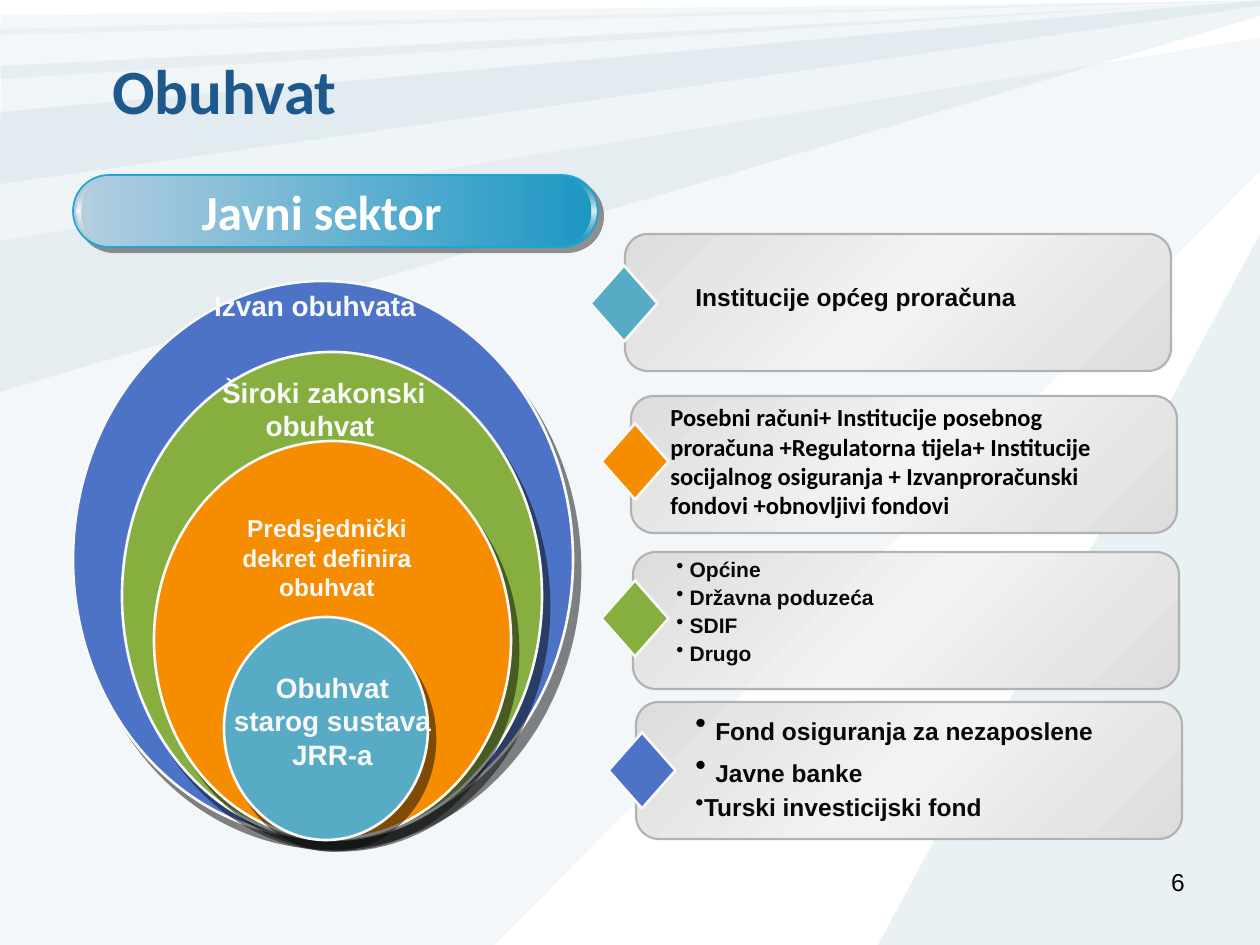
import pptx
import pptx.util
import pptx.dml.color
import pptx.enum.shapes
import pptx.enum.text
import pptx.oxml.ns
import lxml.etree

PX = 914400 / 126
SHAPE = pptx.enum.shapes.MSO_SHAPE
ALIGN = pptx.enum.text.PP_ALIGN
qn = pptx.oxml.ns.qn

RAYS = [
    (10, [(1260, 38), (0, 241), (0, 945), (495, 945), (1260, 171)]),
    (20, [(1260, 234), (878, 945), (1260, 945)]),
    (10, [(1, 15), (0, 35), (1260, 1)]),
    (10, [(1259, 0), (0, 79), (0, 29)]),
    (15, [(1260, 16), (0, 392), (0, 112), (1260, 0)]),
    (14, [(1260, 1), (1, 66), (0, 184), (1260, 6)]),
]
PANEL_SIZE = (546, 137)
DIAMOND_SIZE = (76, 67)
LEVELS = [
    ("57ABC5", (625, 234), (586, 270)),
    ("F68D00", (631, 396), (597, 428)),
    ("87AF3F", (633, 552), (597, 585)),
    ("4D73C7", (636, 702), (604, 737)),
]
ELLIPSES = [
    ("4D73C7", (73, 281, 500, 557)),
    ("87AF3F", (122, 352, 420, 488)),
    ("F68D00", (154, 441, 357, 398)),
    ("57ABC5", (224, 617, 204, 223)),
]
PANEL_STOPS = [(0, "DDDDDD", 100), (50, "F3F3F3", 100), (100, "DDDDDD", 100)]
HEADER_STOPS = [(0, "B6CFE1", 100), (100, "1B97C3", 100)]
GLOSS_STOPS = [(0, "B6B6B6", 0), (50, "FFFFFF", 84), (100, "B6B6B6", 0)]
GLOSSES = [((572, 181, 24, 60), True), ((77, 181, 24, 60), False)]

TEXTS = [
    ((100, 45, 1007, 158), ["Obuhvat"], 36, "Calibri", "1E598E", True, ALIGN.LEFT),
    ((903, 861, 294, 66), ["6"], 14, "Arial", "000000", False, ALIGN.RIGHT),
    ((683, 276, 483, 48), ["Institucije općeg proračuna"], 14, "Arial", "080808", True, ALIGN.LEFT),
    ((658, 396, 496, 146),
     ["Posebni računi+ Institucije posebnog proračuna +Regulatorna tijela+ Institucije "
      "socijalnog osiguranja + Izvanproračunski fondovi +obnovljivi fondovi"],
     14, "Calibri", "000000", True, ALIGN.LEFT),
    ((209, 664, 247, 127), ["Obuhvat", "starog sustava JRR-a"], 16, "Arial", "F8F8F8", True, ALIGN.CENTER),
    ((197, 507, 260, 113), ["Predsjednički dekret definira obuhvat"], 14, "Arial", "F8F8F8", True, ALIGN.CENTER),
    ((190, 369, 260, 89), [" Široki zakonski obuhvat"], 16, "Arial", "F8F8F8", True, ALIGN.CENTER),
    ((185, 282, 260, 89), ["Izvan obuhvata"], 16, "Arial", "F8F8F8", True, ALIGN.CENTER),
]
HEADER_TEXT = ((111, 175, 421, 79), ["Javni sektor"], 28, "Calibri", "FFFFFF", True, ALIGN.CENTER)
BULLETS = [
    ((664, 557, 462, 122), 12, 12, [(True, "Općine"), (True, "Državna poduzeća"), (True, "SDIF"), (True, "Drugo")]),
    ((683, 713, 462, 117), 14, 18,
     [(True, "Fond osiguranja za nezaposlene"), (True, "Javne banke"), (False, "Turski investicijski fond")]),
]


def emu(*values):
    return [pptx.util.Emu(round(v * PX)) for v in values]


def rgb(color):
    return pptx.dml.color.RGBColor.from_string(color)


def sub(parent, tag, **attrs):
    return lxml.etree.SubElement(parent, qn(tag), {k: str(v) for k, v in attrs.items()})


def add_color(parent, color, opacity):
    sub(sub(parent, "a:srgbClr", val=color), "a:alpha", val=opacity * 1000)


def add_shadow(effects, color, distance, angle):
    shadow = sub(effects, "a:outerShdw", blurRad=0, dist=round(distance * 12700),
                 dir=angle * 60000, algn="ctr", rotWithShape=0)
    add_color(shadow, color, 50)


def paint(s, fill=None, stops=None, angle=0, line=None, width=1, shadow=None):
    s.shadow.inherit = False
    if stops:
        s.fill.gradient()
        grad = s._element.spPr.find(qn("a:gradFill"))
        for child in list(grad):
            grad.remove(child)
        stop_list = sub(grad, "a:gsLst")
        for position, color, opacity in stops:
            add_color(sub(stop_list, "a:gs", pos=position * 1000), color, opacity)
        sub(grad, "a:lin", ang=angle * 60000, scaled=0)
    else:
        s.fill.solid()
        s.fill.fore_color.rgb = rgb(fill)
    if line:
        s.line.color.rgb = rgb(line)
        s.line.width = pptx.util.Pt(width)
    else:
        s.line.fill.background()
    if shadow:
        add_shadow(s._element.spPr.find(qn("a:effectLst")), *shadow)


def add_shape(slide, kind, box, **style):
    s = slide.shapes.add_shape(kind, *emu(*box))
    paint(s, **style)
    return s


def add_ray(slide, opacity, points):
    builder = slide.shapes.build_freeform(*points[0], scale=PX)
    builder.add_line_segments(points[1:], close=True)
    s = builder.convert_to_shape()
    paint(s, fill="97BAC9")
    color = s._element.spPr.find(qn("a:solidFill"))[0]
    sub(color, "a:alpha", val=opacity * 1000)


def text_frame(slide, box):
    tf = slide.shapes.add_textbox(*emu(*box)).text_frame
    tf.word_wrap = True
    return tf


def set_font(font, size, name, color, bold):
    font.size = pptx.util.Pt(size)
    font.name = name
    font.bold = bold
    font.color.rgb = rgb(color)


def add_text(slide, box, lines, size, name, color, bold, align):
    tf = text_frame(slide, box)
    tf.text = "\n".join(lines)
    for p in tf.paragraphs:
        p.alignment = align
        set_font(p.font, size, name, color, bold)
    return tf


def add_bullets(slide, box, size, lead_size, items):
    tf = text_frame(slide, box)
    for i, (spaced, text) in enumerate(items):
        p = tf.add_paragraph() if i else tf.paragraphs[0]
        p.line_spacing = 0.7
        p.space_before = pptx.util.Pt((lead_size if spaced else size) / 2)
        sub(p._p.get_or_add_pPr(), "a:buChar", char="•")
        if spaced:
            r = p.add_run()
            r.text = " "
            set_font(r.font, lead_size, "Arial", "000000", False)
        r = p.add_run()
        r.text = text
        set_font(r.font, size, "Arial", "080808", True)


def add_header(slide):
    s = add_shape(slide, SHAPE.ROUNDED_RECTANGLE, (73, 175, 525, 72), stops=HEADER_STOPS,
                  line="1DA5D5", shadow=("292929", 4.2, 45))
    s.adjustments[0] = 0.5
    for box, flipped in GLOSSES:
        s = add_shape(slide, SHAPE.MOON, box, stops=GLOSS_STOPS, angle=90)
        s.adjustments[0] = 0.22
        if flipped:
            s._element.spPr.find(qn("a:xfrm")).set("flipH", "1")
    r = add_text(slide, *HEADER_TEXT).paragraphs[0].runs[0]
    r.font.color.rgb = rgb("FFFFFF")
    effects = lxml.etree.Element(qn("a:effectLst"))
    add_shadow(effects, "000000", 2, 45)
    r._r.rPr.find(qn("a:solidFill")).addnext(effects)


def main():
    prs = pptx.Presentation()
    prs.slide_width, prs.slide_height = emu(1260, 945)
    slide = prs.slides.add_slide(prs.slide_layouts[6])
    for opacity, points in RAYS:
        add_ray(slide, opacity, points)
    add_header(slide)
    for color, panel, diamond in LEVELS:
        add_shape(slide, SHAPE.ROUNDED_RECTANGLE, panel + PANEL_SIZE, stops=PANEL_STOPS,
                  angle=45, line="B2B2B2", width=1.25)
        s = add_shape(slide, SHAPE.DIAMOND, diamond + DIAMOND_SIZE, fill=color, line="F8F8F8", width=1.5)
        s.rotation = 90
    for color, box in ELLIPSES:
        add_shape(slide, SHAPE.OVAL, box, fill=color, line="F8F8F8", width=1.5, shadow=("080808", 7.2, 56))
    for bullets in BULLETS:
        add_bullets(slide, *bullets)
    for text in TEXTS:
        add_text(slide, *text)
    prs.save("out.pptx")


if __name__ == "__main__":
    main()
